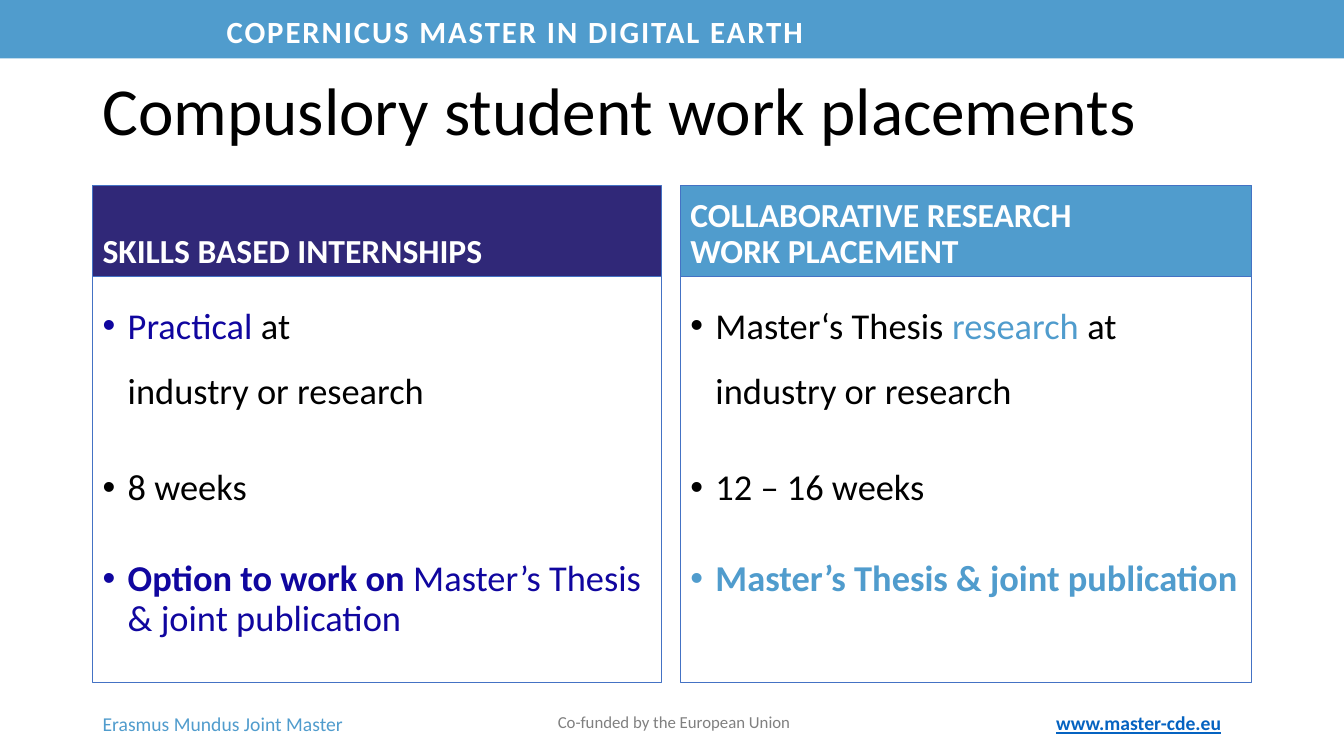
from lxml.etree import SubElement
from pptx import Presentation
from pptx.dml.color import RGBColor
from pptx.enum.shapes import MSO_SHAPE
from pptx.enum.text import MSO_ANCHOR as Anchor, PP_ALIGN as Align
from pptx.oxml.ns import qn
from pptx.util import Pt

WHITE = RGBColor(0xFF, 0xFF, 0xFF)
BLACK = RGBColor(0, 0, 0)
GREY = RGBColor(0x80, 0x80, 0x80)
SKY = RGBColor(0x50, 0x9C, 0xCD)
INDIGO = RGBColor(0x30, 0x28, 0x78)
NAVY = RGBColor(0x10, 0x06, 0x9F)
LINK_BLUE = RGBColor(0x05, 0x63, 0xC1)
BORDER = RGBColor(0x44, 0x72, 0xC4)

HEADING_TOP, HEADING_HEIGHT = 132.5, 64.8
BODY_HEIGHT = 290.2
BULLET_INDENT = 18

# Each bullet: space before, line spacing, runs of (text, colour, bold)
INTERNSHIP_POINTS = [
    (0, 1.5, [("Practical", NAVY, False),
              (" at\nindustry or research", BLACK, False)]),
    (41, 0.9, [("8 weeks", BLACK, False)]),
    (37, 0.9, [("Option to work on ", NAVY, True),
               ("Master’s Thesis & joint publication", NAVY, False)]),
]
RESEARCH_POINTS = [
    (0, 1.5, [("Master‘s Thesis ", BLACK, False), ("research", SKY, False),
              (" at industry or research", BLACK, False)]),
    (41, 0.9, [("12 – 16 weeks", BLACK, False)]),
    (37, 0.9, [("Master’s Thesis & joint publication", SKY, True)]),
]


def set_font(font, size, color, bold=False):
    font.name = "Calibri"
    font.size = Pt(size)
    font.color.rgb = color
    font.bold = bold


def add_box(slide, left, top, width, height, fill=None, border=None):
    box = slide.shapes.add_shape(MSO_SHAPE.RECTANGLE, Pt(left), Pt(top),
                                 Pt(width), Pt(height))
    box.shadow.inherit = False
    if fill is None:
        box.fill.background()
    else:
        box.fill.solid()
        box.fill.fore_color.rgb = fill
    if border is None:
        box.line.fill.background()
    else:
        box.line.color.rgb = border
        box.line.width = Pt(0.75)
    return box


def write_line(frame, text, size, color, bold=False, anchor=Anchor.TOP,
               align=Align.LEFT, line_spacing=1.0):
    """Fill the frame with one paragraph in a single style and return it."""
    frame.word_wrap = True
    frame.vertical_anchor = anchor
    paragraph = frame.paragraphs[0]
    paragraph.text = text
    paragraph.alignment = align
    paragraph.line_spacing = line_spacing
    set_font(paragraph.font, size, color, bold)
    return paragraph


def add_label(slide, left, top, width, height, text, size, color, **style):
    label = slide.shapes.add_textbox(Pt(left), Pt(top), Pt(width), Pt(height))
    return write_line(label.text_frame, text, size, color, **style)


def add_bullet(paragraph, space_before, line_spacing, parts):
    properties = paragraph._p.get_or_add_pPr()
    properties.set("marL", str(Pt(BULLET_INDENT)))
    properties.set("indent", str(-Pt(BULLET_INDENT)))
    SubElement(properties, qn("a:buFont")).set("typeface", "Arial")
    SubElement(properties, qn("a:buChar")).set("char", "•")
    paragraph.alignment = Align.LEFT
    paragraph.space_before = Pt(space_before)
    paragraph.line_spacing = line_spacing
    set_font(paragraph.font, 26, parts[0][1])
    for text, color, bold in parts:
        for index, piece in enumerate(text.split("\n")):
            if index:
                paragraph.add_line_break()
            run = paragraph.add_run()
            run.text = piece
            set_font(run.font, 26, color, bold)


def add_column(slide, left, width, heading, heading_fill, points):
    heading_box = add_box(slide, left, HEADING_TOP, width, HEADING_HEIGHT,
                          heading_fill, BORDER)
    write_line(heading_box.text_frame, heading, 24, WHITE, bold=True,
               anchor=Anchor.BOTTOM, line_spacing=0.9)
    body = add_box(slide, left, HEADING_TOP + HEADING_HEIGHT, width,
                   BODY_HEIGHT, border=BORDER).text_frame
    body.word_wrap = True
    body.vertical_anchor = Anchor.TOP
    for index, point in enumerate(points):
        paragraph = body.add_paragraph() if index else body.paragraphs[0]
        add_bullet(paragraph, *point)


def add_banner(slide):
    add_box(slide, 0, 0, 960, 41.8, SKY)
    programme = add_label(slide, 154.8, 4.5, 590, 36,
                          "COPERNICUS MASTER IN DIGITAL EARTH", 22, WHITE,
                          bold=True, anchor=Anchor.MIDDLE)
    programme.runs[0]._r.get_or_add_rPr().set("spc", "140")


def add_footer(slide):
    add_label(slide, 66.2, 504.7, 298, 24.2, "Erasmus Mundus Joint Master",
              14, SKY)
    add_label(slide, 226, 504.7, 511, 21.8, "Co-funded by the European Union",
              12, GREY, align=Align.CENTER)
    website = add_label(slide, 747.4, 503.3, 148.3, 26, "www.master-cde.eu",
                        14, LINK_BLUE, bold=True, anchor=Anchor.MIDDLE)
    website.font.underline = True


def main():
    deck = Presentation()
    deck.slide_width, deck.slide_height = Pt(960), Pt(540)
    slide = deck.slides.add_slide(deck.slide_layouts[6])
    add_banner(slide)
    add_label(slide, 66.2, 28.8, 828, 104.4,
              "Compuslory student work placements", 48, BLACK,
              anchor=Anchor.MIDDLE, line_spacing=0.9)
    add_column(slide, 66.2, 406.1, "SKILLS BASED INTERNSHIPS", INDIGO,
               INTERNSHIP_POINTS)
    add_column(slide, 486, 408.2, "COLLABORATIVE RESEARCH\vWORK PLACEMENT",
               SKY, RESEARCH_POINTS)
    add_footer(slide)
    deck.save("out.pptx")


if __name__ == "__main__":
    main()
